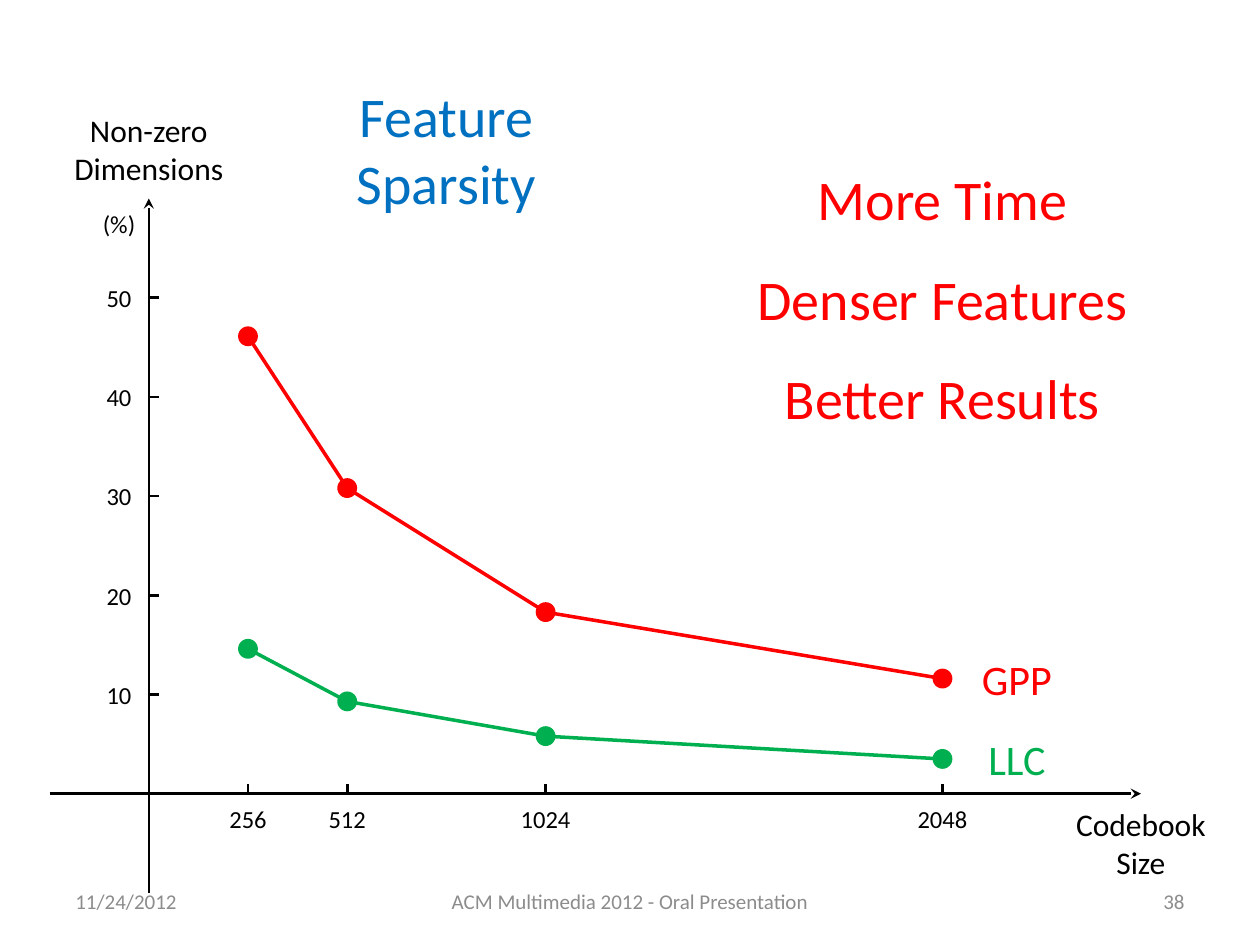
from lxml.etree import SubElement
from pptx import Presentation
from pptx.dml.color import RGBColor
from pptx.enum.shapes import MSO_CONNECTOR, MSO_SHAPE
from pptx.enum.text import MSO_ANCHOR, PP_ALIGN
from pptx.oxml.ns import qn
from pptx.util import Cm, Pt

BLACK, BLUE, RED, GREEN, GRAY = "000000", "0070C0", "FF0000", "00B050", "8C8C8C"

CODEBOOK_SIZES = [256, 512, 1024, 2048]
PERCENT_TICKS = [50, 40, 30, 20, 10]
SERIES = [
    ("LLC", GREEN, [14.6, 9.3, 5.8, 3.5]),
    ("GPP", RED, [46.1, 30.8, 18.3, 11.6]),
]
MESSAGES = ["More Time", "Denser Features", "Better Results"]
FOOTER = [
    ("11/24/2012", 1.27, 5.92, PP_ALIGN.LEFT),
    ("ACM Multimedia 2012 - Oral Presentation", 8.68, 8.04, PP_ALIGN.CENTER),
    ("38", 18.21, 5.92, PP_ALIGN.RIGHT),
]

# All lengths are in centimetres.
ORIGIN_X, ORIGIN_Y = 3, 16
SIZES_PER_CM, CM_PER_PERCENT = 128, 0.2
TICK, DOT = 0.2, 0.4

deck = Presentation()
deck.slide_width, deck.slide_height = Cm(25.4), Cm(19.05)
page = deck.slides.add_slide(deck.slide_layouts[6])


def color(hex_string):
    return RGBColor.from_string(hex_string)


def plot_x(size):
    return ORIGIN_X + size / SIZES_PER_CM


def plot_y(percent):
    return ORIGIN_Y - percent * CM_PER_PERCENT


def add_text(text, left, top, width, height, size=14, ink=BLACK, align=PP_ALIGN.CENTER):
    box = page.shapes.add_textbox(Cm(left), Cm(top), Cm(width), Cm(height))
    box.text_frame.word_wrap = True
    box.text_frame.vertical_anchor = MSO_ANCHOR.MIDDLE
    para = box.text_frame.paragraphs[0]
    para.alignment = align
    span = para.add_run()
    span.text = text
    span.font.name = "Calibri"
    span.font.size = Pt(size)
    span.font.color.rgb = color(ink)


def add_line(start, end, ink=BLACK, width=1.5, arrow=False):
    line = page.shapes.add_connector(
        MSO_CONNECTOR.STRAIGHT, *(Cm(value) for value in (*start, *end)))
    line.line.color.rgb = color(ink)
    line.line.width = Pt(width)
    if arrow:
        SubElement(line.line._get_or_add_ln(), qn("a:tailEnd"), type="stealth")
    SubElement(line._element.spPr, qn("a:effectLst"))


def add_dot(x, y, ink):
    dot = page.shapes.add_shape(
        MSO_SHAPE.OVAL, Cm(x - DOT / 2), Cm(y - DOT / 2), Cm(DOT), Cm(DOT))
    dot.shadow.inherit = False
    dot.fill.solid()
    dot.fill.fore_color.rgb = color(ink)
    dot.line.fill.background()


def add_axes():
    add_line((1, ORIGIN_Y), (23, ORIGIN_Y), arrow=True)
    add_line((ORIGIN_X, 18), (ORIGIN_X, 4), arrow=True)
    add_text("Non-zero Dimensions", 1, 2, 4, 2, size=18)
    add_text("(%)", 1.8, 4, 1.2, 1)
    add_text("Codebook Size", 21, 16, 4, 2, size=18)
    for percent in PERCENT_TICKS:
        y = plot_y(percent)
        add_line((ORIGIN_X, y), (ORIGIN_X + TICK, y))
        add_text(str(percent), 1.8, y - 0.5, 1.2, 1)
    for size in CODEBOOK_SIZES:
        x = plot_x(size)
        add_line((x, ORIGIN_Y - TICK), (x, ORIGIN_Y))
        add_text(str(size), x - 1, ORIGIN_Y, 2, 1)


def add_series(name, ink, percents):
    points = [(plot_x(size), plot_y(percent))
              for size, percent in zip(CODEBOOK_SIZES, percents)]
    for start, end in zip(points, points[1:]):
        add_line(start, end, ink=ink, width=2)
    for x, y in points:
        add_dot(x, y, ink)
    last_x, last_y = points[-1]
    add_text(name, last_x, last_y - 0.5, 3, 1, size=24, ink=ink)


add_axes()
add_text("Feature Sparsity", 6, 1, 6, 4, size=32, ink=BLUE)
for series in SERIES:
    add_series(*series)
for row, message in enumerate(MESSAGES):
    add_text(message, 15, 3 + 2 * row, 8, 2, size=32, ink=RED)
for text, left, width, align in FOOTER:
    add_text(text, left, 17.66, width, 1.01, size=12, ink=GRAY, align=align)

deck.save("out.pptx")
